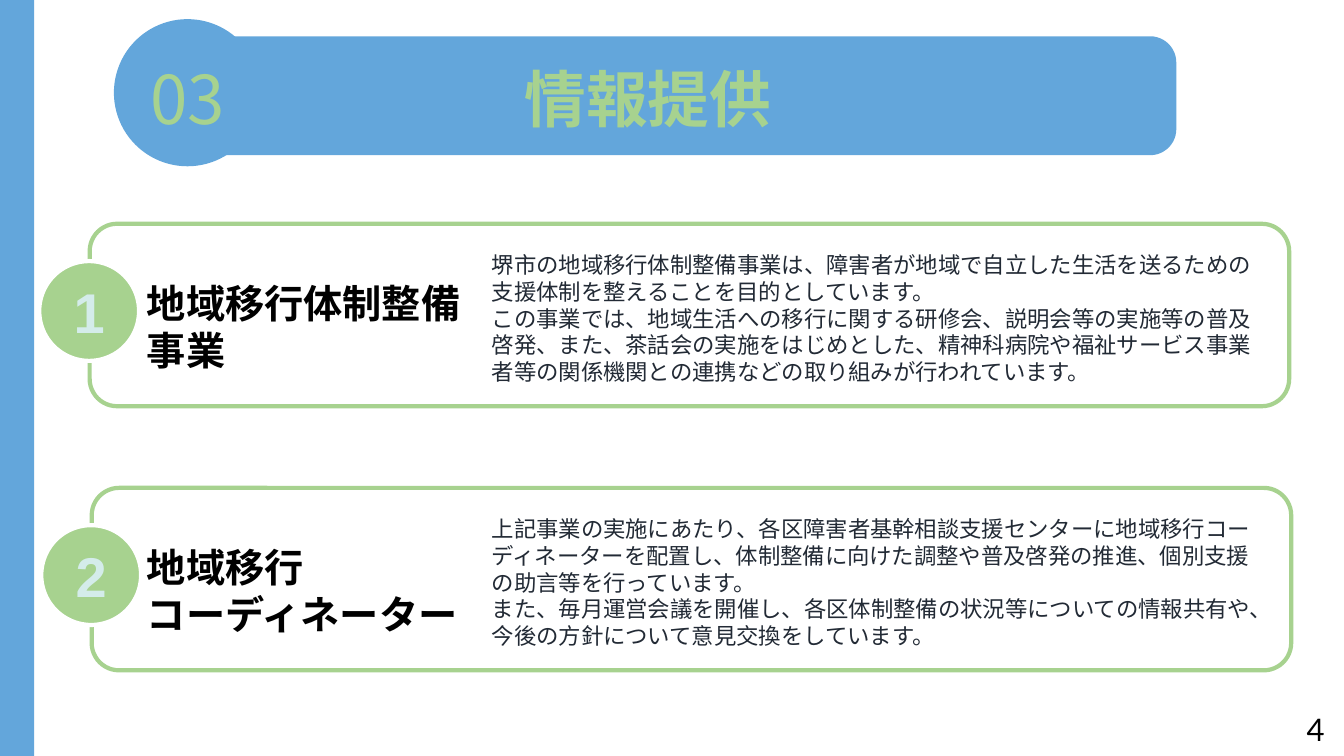
from pptx import Presentation
from pptx.dml.color import RGBColor
from pptx.enum.shapes import MSO_SHAPE as Shape
from pptx.enum.text import MSO_ANCHOR as Anchor, PP_ALIGN as Align
from pptx.oxml.ns import qn
from pptx.util import Inches, Pt

BLUE = RGBColor(0x63, 0xA6, 0xDB)
GREEN = RGBColor(0xA7, 0xD2, 0x8F)
PALE = RGBColor(0xD4, 0xEC, 0xEA)
NAVY = RGBColor(0x22, 0x2A, 0x35)
WHITE = RGBColor(0xFF, 0xFF, 0xFF)
BLACK = RGBColor(0x00, 0x00, 0x00)
JAPANESE = "Noto Sans CJK JP"

deck = Presentation()
deck.slide_width, deck.slide_height = Inches(13.33), Inches(7.5)
COLUMN, ROW = deck.slide_width / 160, deck.slide_height / 90
page = deck.slides.add_slide(deck.slide_layouts[6])


def add_box(kind, left, top, width, height, fill=None, line=None, corner=None):
    place = [round(n) for n in (left * COLUMN, top * ROW, width * COLUMN, height * ROW)]
    if kind is None:
        return page.shapes.add_textbox(*place)
    box = page.shapes.add_shape(kind, *place)
    box.shadow.inherit = False
    box.fill.solid()
    box.fill.fore_color.rgb = fill
    if line is None:
        box.line.fill.background()
    else:
        box.line.color.rgb = line
        box.line.width = Pt(3)
    if corner is not None:
        box.adjustments[0] = corner
    return box


def write(box, lines, size, color, name=JAPANESE, bold=False,
          align=Align.LEFT, anchor=Anchor.TOP, leading=None):
    frame = box.text_frame
    frame.word_wrap = True
    frame.vertical_anchor = anchor
    for index, line in enumerate(lines):
        para = frame.paragraphs[0] if index == 0 else frame.add_paragraph()
        para.alignment = align
        if leading:
            para.line_spacing = Pt(round(size * leading, 1))
        span = para.add_run()
        span.text = line
        for key, value in {"size": Pt(size), "bold": bold, "name": name}.items():
            setattr(span.font, key, value)
        span.font.color.rgb = color
        east_asian = span.font._element.makeelement(qn("a:ea"), {"typeface": name})
        span.font._element.find(qn("a:latin")).addnext(east_asian)


add_box(Shape.RECTANGLE, 0, 0, 4.08, 90, BLUE)

add_box(Shape.ROUNDED_RECTANGLE, 19.92, 4.32, 120.12, 14.16, BLUE, corner=0.22)
title = add_box(None, 38.16, 5.88, 78, 11.76)
write(title, ["情報提供"], 44, GREEN, bold=True, align=Align.CENTER, leading=1.3)
badge = add_box(Shape.OVAL, 13.56, 2.28, 17.52, 17.52, BLUE)
write(badge, ["03"], 48, GREEN, align=Align.CENTER, anchor=Anchor.MIDDLE, leading=1.35)

topics = [
    (["地域移行体制整備事業"],
     ["堺市の地域移行体制整備事業は、障害者が地域で自立した生活を送るための支援体制を整えることを目的としています。",
      "この事業では、地域生活への移行に関する研修会、説明会等の実施等の普及啓発、また、茶話会の実施をはじめとした、"
      "精神科病院や福祉サービス事業者等の関係機関との連携などの取り組みが行われています。"]),
    (["地域移行", "コーディネーター"],
     ["上記事業の実施にあたり、各区障害者基幹相談支援センターに地域移行コーディネーターを配置し、"
      "体制整備に向けた調整や普及啓発の推進、個別支援の助言等を行っています。",
      "また、毎月運営会議を開催し、各区体制整備の状況等についての情報共有や、今後の方針について意見交換をしています。"]),
]
for index, (heading, details) in enumerate(topics):
    shift, drop = index * 0.24, index * 31.44
    add_box(Shape.ROUNDED_RECTANGLE, 10.68 + shift, 26.64 + drop, 142.8, 21.72,
            WHITE, GREEN, 0.15)
    circle = add_box(Shape.OVAL, 4.68 + shift, 31.08 + drop, 11.88, 11.88, GREEN, WHITE)
    write(circle, [str(index + 1)], 40, PALE, "Arial", True, Align.CENTER, Anchor.MIDDLE)
    label = add_box(None, 16.32, 32.64 + drop, 41.88, 11.88)
    write(label, heading, 28, BLACK, bold=True, leading=1.2)
    body = add_box(None, 57.36, 29.28 + drop, 93.6, 18.12)
    write(body, details, 16, NAVY, leading=1.2)

number = add_box(None, 121.56, 84, 37.32, 4.8)
write(number, ["4"], 22.2, BLACK, "Lato", align=Align.RIGHT)

deck.save("out.pptx")
